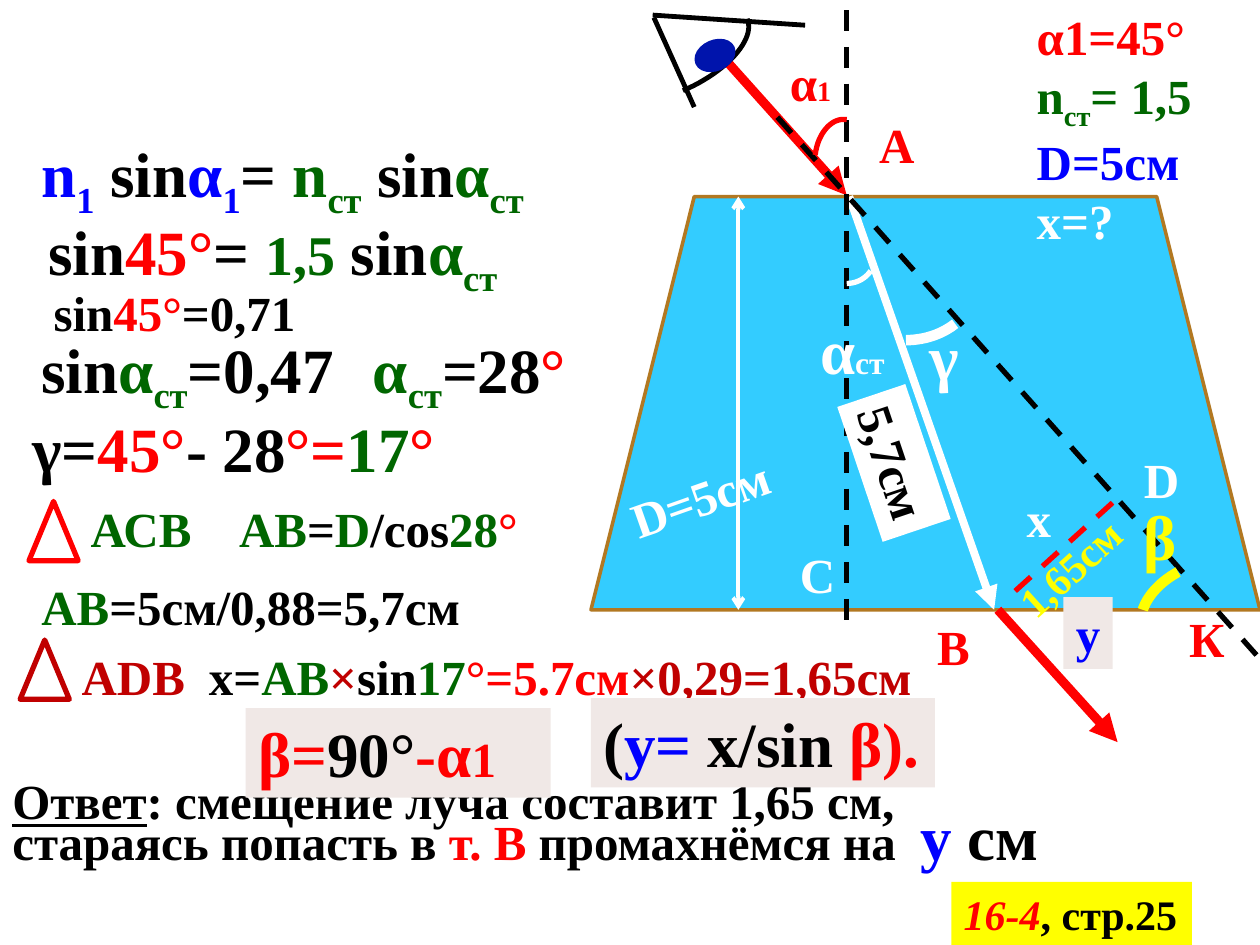
import pptx
import pptx.util
import pptx.dml.color
import pptx.enum.dml
import pptx.enum.shapes
import pptx.enum.text
import pptx.oxml.ns
import lxml.etree

COLOURS = {
    "black": "000000", "white": "FFFFFF", "red": "FF0000", "crimson": "C00000",
    "blue": "0000FF", "navy": "0014AC", "green": "006600", "yellow": "FFFF00",
    "glass": "33CCFF", "edge": "B27822", "panel": "F0E8E6",
}
FONT = {"name": "Times New Roman", "bold": True}
SHAPES = pptx.enum.shapes.MSO_SHAPE
DASH = pptx.enum.dml.MSO_LINE.DASH
GRID_COLUMNS = 100


def rgb(colour):
    """Return the named colour."""
    return pptx.dml.color.RGBColor.from_string(COLOURS[colour])


def add_drawing(parent, tag, **attributes):
    """Append a DrawingML element to its parent."""
    element = lxml.etree.SubElement(parent, pptx.oxml.ns.qn(tag))
    for name, value in attributes.items():
        element.set(name, value)
    return element


class Region:
    """A part of the slide whose contents are placed in grid units from its corner."""

    def __init__(self, slide, unit, left, top):
        """Keep the corner and the grid unit."""
        self.shapes, self.unit, self.left, self.top = slide.shapes, unit, left, top

    def point(self, x, y):
        """Return slide lengths for a grid point of the region."""
        return round((self.left + x) * self.unit), round((self.top + y) * self.unit)

    def frame(self, x, y, width, height):
        """Return slide lengths for a grid box of the region."""
        return *self.point(x, y), round(width * self.unit), round(height * self.unit)

    def outline(self, part, colour, width, dash=None):
        """Format a line."""
        part.line.color.rgb = rgb(colour)
        part.line.width = pptx.util.Pt(width)
        if dash:
            part.line.dash_style = dash

    def shape(self, kind, box, fill=None, line=None, rotation=0):
        """Add a preset shape."""
        part = self.shapes.add_shape(kind, *self.frame(*box))
        part.shadow.inherit = False
        part.rotation = rotation
        if fill:
            part.fill.solid()
            part.fill.fore_color.rgb = rgb(fill)
        else:
            part.fill.background()
        self.outline(part, *line)
        return part

    def ray(self, start, end, colour, width, dash=None, **ends):
        """Add a straight line with optional arrowheads."""
        part = self.shapes.add_connector(
            pptx.enum.shapes.MSO_CONNECTOR.STRAIGHT, *self.point(*start), *self.point(*end))
        self.outline(part, colour, width, dash)
        for name, kind in ends.items():
            add_drawing(part.line._get_or_add_ln(), f"a:{name}", type=kind)
        add_drawing(part._element.spPr, "a:effectLst")

    def arc(self, controls, colour, width, steps=24):
        """Add an open curve through points of a cubic Bezier."""
        points = []
        for step in range(steps + 1):
            t = step / steps
            weights = ((1 - t) ** 3, 3 * t * (1 - t) ** 2, 3 * t * t * (1 - t), t ** 3)
            points.append(self.point(*(
                sum(w * c[axis] for w, c in zip(weights, controls)) for axis in (0, 1))))
        builder = self.shapes.build_freeform(*points[0])
        builder.add_line_segments(points[1:], close=False)
        part = builder.convert_to_shape()
        part.shadow.inherit = False
        part.fill.background()
        self.outline(part, colour, width)

    def text(self, box, size, *paragraphs, fill=None, wrap=True, rotation=0, spacing=None,
             anchor=pptx.enum.text.MSO_ANCHOR.TOP):
        """Add text; each run is (text, colour, font values), a leading _ means subscript."""
        part = self.shapes.add_textbox(*self.frame(*box))
        part.rotation = rotation
        if fill:
            part.fill.solid()
            part.fill.fore_color.rgb = rgb(fill)
        frame = part.text_frame
        frame.word_wrap = wrap
        frame.auto_size = pptx.enum.text.MSO_AUTO_SIZE.SHAPE_TO_FIT_TEXT
        frame.vertical_anchor = anchor
        for index, runs in enumerate(paragraphs):
            paragraph = frame.add_paragraph() if index else frame.paragraphs[0]
            if spacing:
                paragraph.line_spacing = pptx.util.Pt(spacing)
            for words, colour, *values in runs:
                run = paragraph.add_run()
                run.text = words.removeprefix("_")
                run.font.color.rgb = rgb(colour)
                style = {**FONT, "size": size, **(values[0] if values else {})}
                style["size"] = pptx.util.Pt(style["size"])
                for name, value in style.items():
                    setattr(run.font, name, value)
                if words.startswith("_"):
                    run._r.get_or_add_rPr().set("baseline", "-25000")


def draw_eye(region):
    """Draw the observer's eye."""
    region.arc([(13.3, 1.5), (14, 3.1), (11.7, 5.7), (8.2, 7.2)], "black", 2.75)
    region.ray((5.9, 1.4), (9.1, 8.5), "black", 2.75)
    region.ray((5.8, 1.2), (17.9, 2), "black", 2.75)
    region.shape(SHAPES.OVAL, (9.7, 2.9, 2.1, 3), "navy", ("navy", 2.75), 246.3)


def draw_refraction(region):
    """Draw the glass plate, the rays and their labels."""
    region.shape(SHAPES.TRAPEZOID, (0.9, 15.6, 53.1, 32.8), "glass", ("edge", 2))
    region.ray((11.8, 5), (21.2, 15.5), "red", 5.25, tailEnd="triangle")
    region.ray((21.4, 15.6), (32.9, 48.4), "white", 4.5, tailEnd="triangle")
    region.ray((21.2, 0.8), (21.2, 50), "black", 3, DASH)
    region.ray((33.2, 48.4), (42.7, 58.9), "red", 5.25, tailEnd="triangle")
    region.ray((15.7, 9.3), (54, 52.3), "black", 3, DASH)
    region.ray((12.6, 15.6), (12.6, 48.4), "white", 2.25, headEnd="arrow", tailEnd="arrow")
    region.ray((42.3, 39.9), (33.7, 47.7), "red", 3, DASH)
    for controls, colour, width in (
        ([(21.2, 22.5), (22, 22.5), (22.7, 22.1), (23.1, 21.5)], "white", 3),
        ([(18.7, 12.3), (18.9, 10.6), (20, 9.3), (21.2, 9.5)], "red", 3),
        ([(25.9, 27), (27.4, 27), (28.8, 26.5), (29.8, 25.7)], "white", 6),
        ([(47.5, 45.4), (46.2, 46.1), (45.1, 47.2), (44.7, 48.4)], "yellow", 6),
    ):
        region.arc(controls, colour, width)
    for words, x, y, width, colour in (
        ("A", 22.8, 8.6, 6.3, "red"), ("B", 27.4, 48.4, 6.3, "red"),
        ("C", 16.5, 42.7, 4.7, "white"), ("D", 43.8, 35.2, 4.7, "white"),
        ("x", 34.5, 38.3, 3.9, "white"), ("К", 47.4, 47.8, 6.3, "red"),
    ):
        region.text((x, y, width, 5.7), 28, [(words, colour)])
    region.text((38.4, 47.4, 3.9, 5.7), 28, [("y", "blue")], fill="panel")
    region.text((15.7, 3.7, 6.3, 5.7), 28, [("α", "red"), ("1", "red", {"size": 16})])
    region.text((18.1, 24.2, 7.8, 7.1), 36, [("α", "white"), ("ст", "white", {"size": 18})])
    region.text((26.8, 24.7, 5.5, 7.1), 36, [("γ", "white")])
    region.text((43.8, 39, 5.5, 7.1), 36, [("β", "yellow")])
    region.text((2.9, 36.6, 13.5, 5.7), 28, [("D=5см", "white")], wrap=False, rotation=340.6)
    region.text((33.1, 42.5, 11.7, 5), 24, [("1,65см", "yellow")], wrap=False, rotation=317.8)
    region.text((19.3, 33.9, 11.3, 5.7), 28, [("5,7см", "black")],
                fill="white", wrap=False, rotation=71.4)
    region.text((35.3, 0, 18.7, 19.9), 28, [("α1=45°", "red")],
                [("n", "green"), ("_ст", "green"), ("= 1,5", "green")],
                [("D=5см", "blue")], [("x=?", "white")])


def write_solution(region):
    """Write the steps of the solution."""
    refracted = [("α", "green"), ("_ст", "green")]
    sine = [("45°", "red")]
    for box, size, wrap, runs in (
        ((2.3, 0.2, 44.3, 7.1), 36, False,
         [("n", "blue"), ("_1", "blue"), (" sin", "black"), ("α", "blue"), ("_1", "blue"),
          ("= ", "black"), ("n", "green"), ("_ст", "green"), (" sin", "black"), *refracted]),
        ((1.6, 6.4, 40, 7.1), 36, False,
         [(" sin", "black"), *sine, ("= ", "black"), ("1,5", "green", {"size": 32}),
          (" sin", "black"), *refracted]),
        ((2.3, 11.9, 22.4, 5.7), 28, False,
         [(" sin", "black"), *sine, ("=0,71", "black")]),
        ((2.3, 15.7, 26.2, 7.1), 36, False,
         [("sin", "black"), *refracted, ("=0,47", "black")]),
        ((28.6, 15.7, 18.3, 7.1), 36, False,
         [*refracted, ("=28", "black"), ("°", "red")]),
        ((1.6, 22, 36.7, 7.1), 36, True,
         [("γ=", "black"), *sine, ("- 28", "black"), ("°=", "red"),
          ("17", "green"), ("°", "red")]),
        ((6.2, 29.1, 10.1, 5.7), 28, False, [("АСВ", "green")]),
        ((18, 29.1, 25, 5.7), 28, True,
         [("АВ", "green"), ("=", "black"), ("D", "green"), ("/cos", "black"),
          ("28", "green"), ("°", "red")]),
        ((2.3, 35.3, 36.7, 5.7), 28, True, [("АВ", "green"), ("=5cм/0,88=5,7см", "black")]),
        ((5.5, 40.8, 10.3, 5.7), 28, False, [("АDВ", "crimson")]),
        ((15.6, 40.8, 60.2, 5.7), 28, True,
         [("x=", "black"), ("АВ", "green"), ("×", "crimson"), ("sin", "black"),
          ("17", "green"), ("°=5.7см", "red"), ("×0,29=1,65см", "crimson")]),
    ):
        region.text(box, size, runs, wrap=wrap)
    for x, y, colour in ((2.3, 29.8, "red"), (1.6, 40.8, "crimson")):
        region.shape(SHAPES.ISOSCELES_TRIANGLE, (x, y, 3.9, 4.7), None, (colour, 3))


def write_answer(region):
    """Write the answer, its formulas and the exercise number."""
    large = {"size": 36}
    region.text((0, 6.7, 100, 8.3), 28,
                [("Ответ", "black", {"underline": True}),
                 (": смещение луча составит 1,65 см,", "black")],
                [("стараясь попасть в ", "black"), ("т. В ", "red"),
                 ("промахнёмся на  ", "black"), ("y", "blue", large), (" см", "black", large)],
                spacing=25, anchor=pptx.enum.text.MSO_ANCHOR.MIDDLE)
    region.text((19.5, 1.2, 24.2, 7.1), 36,
                [("β=", "red"), ("90°", "black"), ("-α", "red"), ("1", "red", {"size": 28})],
                fill="panel")
    region.text((46.9, 0.4, 27.3, 7.1), 36,
                [("(", "black"), ("y=", "blue"), (" x/sin", "black"), (" β).", "red")],
                fill="panel", wrap=False)
    region.text((75.5, 15, 19.1, 5), 24,
                [("16-4", "red", {"italic": True}), (", стр.25", "black")],
                fill="yellow", wrap=False)


def main():
    """Build and save the slide."""
    deck = pptx.Presentation()
    deck.slide_width, deck.slide_height = pptx.util.Inches(10), pptx.util.Inches(7.5)
    slide = deck.slides.add_slide(deck.slide_layouts[6])
    unit = deck.slide_width / GRID_COLUMNS
    diagram = Region(slide, unit, 46, 0)
    draw_refraction(diagram)
    draw_eye(diagram)
    write_solution(Region(slide, unit, 0, 10))
    write_answer(Region(slide, unit, 0, 55))
    deck.save("out.pptx")


if __name__ == "__main__":
    main()
